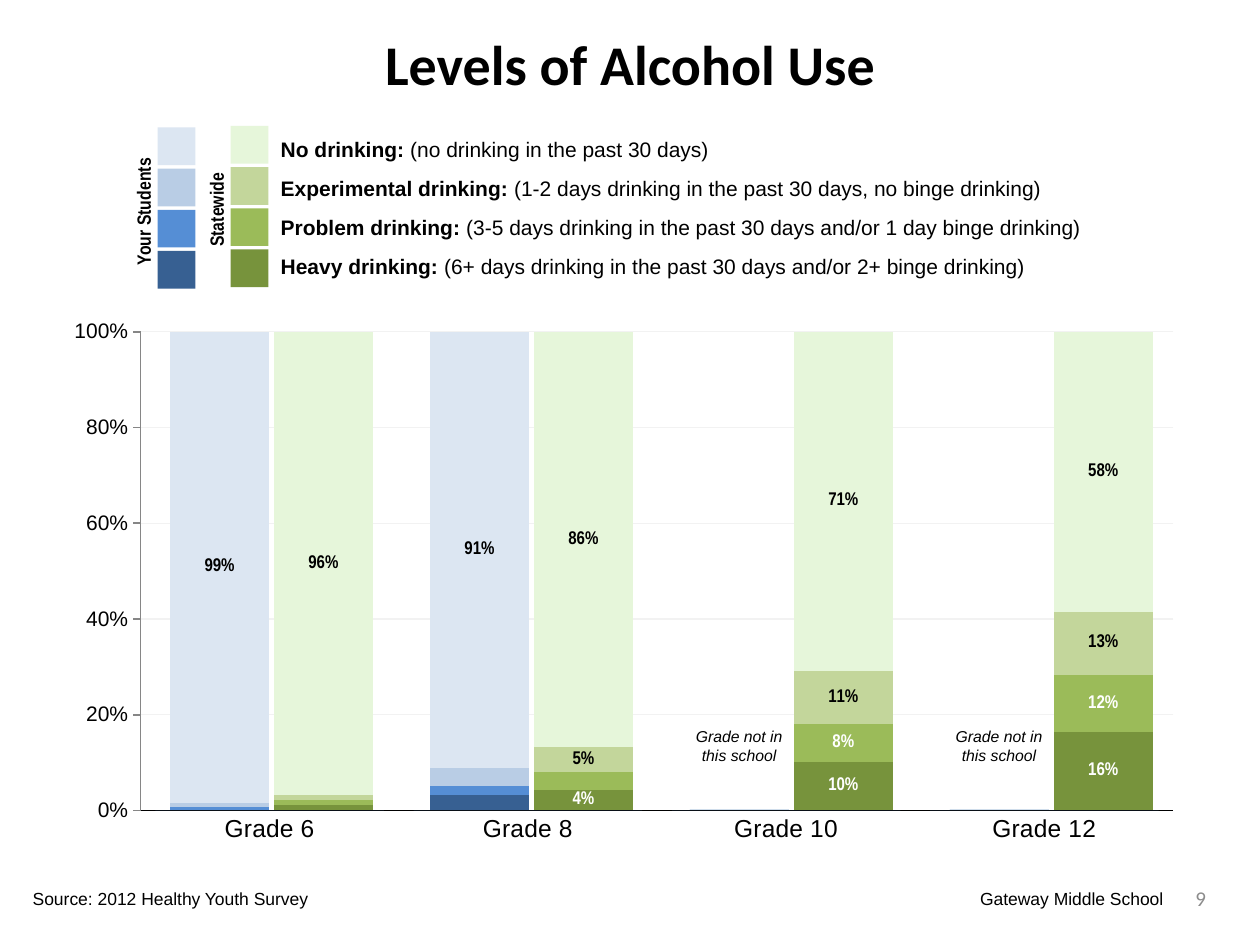
from lxml.etree import fromstring
from pptx import Presentation
from pptx.chart.data import CategoryChartData
from pptx.dml.color import RGBColor
from pptx.enum.chart import XL_CHART_TYPE, XL_LABEL_POSITION, XL_TICK_MARK
from pptx.enum.shapes import MSO_SHAPE
from pptx.enum.text import MSO_ANCHOR, PP_ALIGN
from pptx.util import Cm, Pt

BLACK = RGBColor(0x00, 0x00, 0x00)
WHITE = RGBColor(0xFF, 0xFF, 0xFF)
GREY = RGBColor(0x8C, 0x8C, 0x8C)
AXIS = RGBColor(0x86, 0x86, 0x86)
GRID = RGBColor(0xF2, 0xF2, 0xF2)
BLUES = [RGBColor(0x37, 0x60, 0x92), RGBColor(0x55, 0x8E, 0xD5),
         RGBColor(0xB9, 0xCD, 0xE5), RGBColor(0xDC, 0xE6, 0xF2)]
GREENS = [RGBColor(0x77, 0x93, 0x3C), RGBColor(0x9B, 0xBB, 0x59),
          RGBColor(0xC3, 0xD6, 0x9B), RGBColor(0xE6, 0xF6, 0xDA)]

TITLE = "Levels of Alcohol Use"
LEVELS = [
    ("No drinking: ", "(no drinking in the past 30 days)", 9.22),
    ("Experimental drinking: ", "(1-2 days drinking in the past 30 days, no binge drinking)", 15.98),
    ("Problem drinking: ", "(3-5 days drinking in the past 30 days and/or 1 day binge drinking)", 16.79),
    ("Heavy drinking: ", "(6+ days drinking in the past 30 days and/or 2+ binge drinking)", 15.65),
]
KEYS = [("Your Students", BLUES, 3.18, 2.57, 2.69), ("Statewide", GREENS, 4.65, 2.54, 2.01)]
NAMES = ["Heavy", "Problem", "Experimental", "None"]
GRADES = [
    ("Grade 6", [0.01, 0.01, 0.01, 0.96], [0, 0.005, 0.01, 0.99]),
    ("Grade 8", [0.04, 0.039, 0.05, 0.86], [0.03, 0.02, 0.038, 0.91]),
    ("Grade 10", [0.1, 0.08, 0.11, 0.71], [0, 0, 0, 0]),
    ("Grade 12", [0.16, 0.12, 0.13, 0.58], [0, 0, 0, 0]),
]
FIRST, STEP = 3.38, 5.24

deck = Presentation()
deck.slide_width, deck.slide_height = Cm(25.4), Cm(19.05)
slide = deck.slides.add_slide(deck.slide_layouts[6])


def write(text, left, top, width, height, more="", size=12, font="Arial", color=BLACK,
          bold=False, slant=False, align=PP_ALIGN.LEFT, anchor=MSO_ANCHOR.TOP,
          wrap=False, turn=0, inset=None):
    box = slide.shapes.add_textbox(Cm(left), Cm(top), Cm(width), Cm(height))
    box.rotation = turn
    frame = box.text_frame
    frame.word_wrap = wrap
    frame.vertical_anchor = anchor
    if inset is not None:
        frame.margin_left = frame.margin_right = frame.margin_top = 0
        frame.margin_bottom = Cm(inset)
    para = frame.paragraphs[0]
    para.alignment = align
    for part, heavy in ((text, bold), (more, False)):
        if part:
            run = para.add_run()
            run.text = part
            run.font.size, run.font.name = Pt(size), font
            run.font.bold, run.font.italic = heavy, slant
            run.font.color.rgb = color


def style(font, size, name="Arial", color=BLACK, bold=False):
    font.size, font.name, font.bold = Pt(size), name, bold
    font.color.rgb = color


def paint(fill, color):
    fill.solid()
    fill.fore_color.rgb = color


def chart(cats, rows, left, top, width, height, area, gap):
    data = CategoryChartData(number_format="0%")
    data.categories = cats
    for name, vals in rows:
        data.add_series(name, vals)
    made = slide.shapes.add_chart(XL_CHART_TYPE.COLUMN_STACKED_100, Cm(left), Cm(top),
                                  Cm(width), Cm(height), data).chart
    made.has_legend = made.has_title = False
    style(made.font, 10, "Calibri")
    plot = made.plots[0]
    plot.gap_width, plot.overlap, plot.vary_by_categories = gap, 100, False
    axis = made.value_axis
    axis.minimum_scale, axis.maximum_scale, axis.major_unit = 0, 1, 0.2
    axis.has_major_gridlines = False
    spot = "".join(f'<c:{tag} val="{val}"/>' for tag, val in zip("xywh", area))
    node = fromstring(
        '<c:layout xmlns:c="http://schemas.openxmlformats.org/drawingml/2006/chart">'
        '<c:manualLayout><c:layoutTarget val="inner"/><c:xMode val="edge"/>'
        f'<c:yMode val="edge"/>{spot}</c:manualLayout></c:layout>')
    frame = made.element.xpath(".//c:plotArea")[0]
    for old in frame.xpath("./c:layout"):
        frame.remove(old)
    frame.insert(0, node)
    return made


def base():
    made = chart([grade[0] for grade in GRADES], [("Scale", [0] * len(GRADES))],
                 1.5, 6.35, 22.2, 10.92, (0.06, 0.031, 0.938, 0.884), 13)
    cat, val = made.category_axis, made.value_axis
    cat.major_tick_mark = XL_TICK_MARK.NONE
    val.major_tick_mark = XL_TICK_MARK.OUTSIDE
    style(cat.tick_labels.font, 14)
    style(val.tick_labels.font, 12)
    val.tick_labels.number_format = "0%"
    val.tick_labels.number_format_is_linked = False
    val.has_major_gridlines = True
    for line, color, width in ((cat.format.line, BLACK, 1), (val.format.line, AXIS, 1),
                               (val.major_gridlines.format.line, GRID, 0.75)):
        line.color.rgb, line.width = color, Pt(width)


def bars(left, state, school):
    made = chart(["1", "2"], list(zip(NAMES, zip(state, school))),
                 left, 6.48, 4.19, 10.29, (0, 0.02, 1, 0.937), 5)
    made.category_axis.reverse_order = True
    made.category_axis.visible = made.value_axis.visible = False
    for k, row in enumerate(made.plots[0].series):
        paint(row.format.fill, BLUES[k])
        paint(row.points[0].format.fill, GREENS[k])
        tags = row.data_labels
        tags.show_value = True
        tags.position = XL_LABEL_POSITION.CENTER
        tags.number_format = '[<0.04]" ";0%'
        tags.number_format_is_linked = False
        style(tags.font, 10.5, "Arial Narrow", WHITE if k < 2 else BLACK, True)


base()
for k, (name, state, school) in enumerate(GRADES):
    bars(FIRST + k * STEP, state, school)
    if not any(school):
        write("Grade not in this school", FIRST + k * STEP + 0.09, 11.86, 1.9, 3.81,
              size=9, slant=True, align=PP_ALIGN.CENTER, anchor=MSO_ANCHOR.BOTTOM,
              wrap=True, inset=0.25)

for name, tones, left, top, width in KEYS:
    for k, tone in enumerate(reversed(tones)):
        tile = slide.shapes.add_shape(MSO_SHAPE.RECTANGLE, Cm(left), Cm(top + k * 0.83),
                                      Cm(0.76), Cm(0.76))
        tile.shadow.inherit = False
        paint(tile.fill, tone)
        tile.line.fill.background()
    write(name, left - 0.28 - width / 2, top + 1.31, width, 0.74,
          size=11, font="Arial Narrow", bold=True, turn=270)

for k, (name, note, width) in enumerate(LEVELS):
    write(name, 5.41, 2.62 + k * 0.79, width, 0.76, more=note, bold=True)

write(TITLE, 0.64, 0.43, 24.13, 1.7, size=32, font="Calibri", bold=True,
      align=PP_ALIGN.CENTER, anchor=MSO_ANCHOR.MIDDLE, wrap=True)
write("Source: 2012 Healthy Youth Survey", 0.41, 17.78, 6.15, 0.69, size=10)
write("Gateway Middle School", 8.26, 17.78, 15.44, 0.69, size=10, align=PP_ALIGN.RIGHT)
write("9", 23.29, 17.6, 1.27, 1.02, font="Calibri", color=GREY,
      align=PP_ALIGN.RIGHT, anchor=MSO_ANCHOR.MIDDLE, wrap=True)

deck.save("out.pptx")
